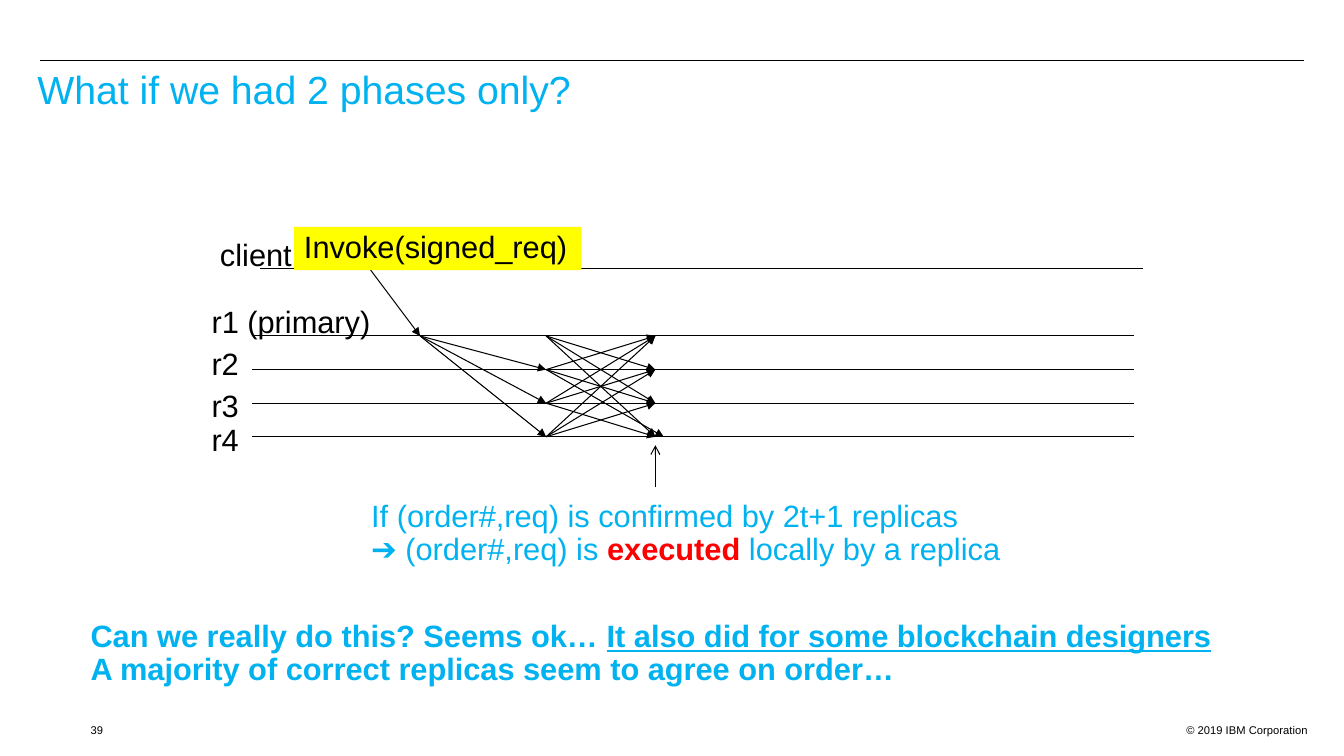
from lxml.etree import SubElement
from pptx import Presentation
from pptx.dml.color import RGBColor
from pptx.enum.shapes import MSO_CONNECTOR, MSO_SHAPE
from pptx.enum.text import MSO_ANCHOR as Anchor, MSO_AUTO_SIZE as AutoSize, PP_ALIGN as Align
from pptx.oxml.ns import qn
from pptx.util import Inches, Pt

BLACK, BLUE, RED, YELLOW = "000000", "00B2EF", "FF0000", "FFFF00"
UNIT = Inches(1) / 12  # the diagram sits on a grid of twelfths of an inch

deck = Presentation()
deck.slide_width, deck.slide_height = Inches(13.33), Inches(7.5)
page = deck.slides.add_slide(deck.slide_layouts[5])


def write(box, lines, size=22, color=BLACK, bold=False, align=Align.LEFT, anchor=Anchor.TOP):
    """Fill a shape with paragraphs and return them."""
    frame = box.text_frame
    frame.text = "\n".join(lines)
    frame.word_wrap = False
    frame.auto_size = AutoSize.NONE
    frame.vertical_anchor = anchor
    for para in frame.paragraphs:
        para.alignment = align
        para.line_spacing = 0.9
        para.font.name, para.font.size, para.font.bold = "Arial", Pt(size), bold
        para.font.color.rgb = RGBColor.from_string(color)
    return frame.paragraphs


def draw_line(start, end, head=None):
    """Draw a thin black line between two grid points, with an optional arrowhead at its end."""
    line = page.shapes.add_connector(
        MSO_CONNECTOR.STRAIGHT, *(round(UNIT * value) for value in (*start, *end)))
    line.line.color.rgb = RGBColor.from_string(BLACK)
    line.line.width = Pt(0.75)
    properties = line._element.spPr
    if head:
        SubElement(properties.find(qn("a:ln")), qn("a:tailEnd"), type=head)
    SubElement(properties, qn("a:effectLst"))


# Header and footer
draw_line((4.8, 7.2), (155.2, 7.2))
title = page.shapes.title
title.left, title.top, title.width, title.height = map(Inches, (0.27, 0.65, 12.67, 0.8))
write(title, ["What if we had 2 phases only?"], 28, BLUE)
title.text_frame.word_wrap = True
for left, width, text, align in [(11.07, 2, "© 2019 IBM Corporation", Align.RIGHT),
                                 (0.8, 1.47, "39", Align.LEFT)]:
    footer = page.shapes.add_textbox(*map(Inches, (left, 7.15, width, 0.2)))
    write(footer, [text], 8, align=align, anchor=Anchor.MIDDLE)
    footer.text_frame.word_wrap = True

# Timelines of the client and the four replicas
client_row, replica_rows = 32, [40, 44, 48, 52]
draw_line((31, client_row), (136, client_row))
for row in replica_rows:
    draw_line((30, row), (135, row))

for column, row, width, name in [(25, 28, 0.92, "client"), (24, 36, 1.89, "r1 (primary)"),
                                 (24, 41, 0.56, "r2"), (24, 46, 0.56, "r3"),
                                 (24, 50, 0.56, "r4")]:
    label = page.shapes.add_textbox(
        round(column * UNIT), round(row * UNIT), Inches(width), Inches(0.43))
    write(label, [name])

# Messages: request, ordering by the primary, then exchange among all replicas
primary_row = replica_rows[0]
draw_line((44, client_row), (50, primary_row), "triangle")
for row in replica_rows[1:]:
    draw_line((50, primary_row), (65, row), "triangle")
for sender in replica_rows:
    for receiver in replica_rows:
        if sender != receiver:
            arrival = 79 if (sender, receiver) == (44, 52) else 78
            draw_line((65, sender), (arrival, receiver), "triangle")

request = page.shapes.add_shape(
    MSO_SHAPE.RECTANGLE, round(35 * UNIT), round(27 * UNIT), Inches(2.85), Inches(0.43))
request.shadow.inherit = False
request.fill.solid()
request.fill.fore_color.rgb = RGBColor.from_string(YELLOW)
request.line.fill.background()
write(request, ["Invoke(signed_req)"])

# Explanation and closing question
rule = page.shapes.add_textbox(round(43 * UNIT), round(59 * UNIT), Inches(6.6), Inches(0.77))
outcome = write(rule, ["If (order#,req) is confirmed by 2t+1 replicas", "➔ (order#,req) is "],
                color=BLUE)[1]
span = outcome.add_run()
span.text = "executed"
span.font.bold = True
span.font.color.rgb = RGBColor.from_string(RED)
outcome.add_run().text = " locally by a replica"

question = page.shapes.add_textbox(*map(Inches, (0.8, 6.11, 11.33, 0.77)))
doubt = write(question, ["Can we really do this? Seems ok… ",
                         "A majority of correct replicas seem to agree on order…"],
              color=BLUE, bold=True)[0]
span = doubt.add_run()
span.text = "It also did for some blockchain designers"
span.font.underline = True

draw_line((78, 58), (78, 53), "arrow")

deck.save("out.pptx")
